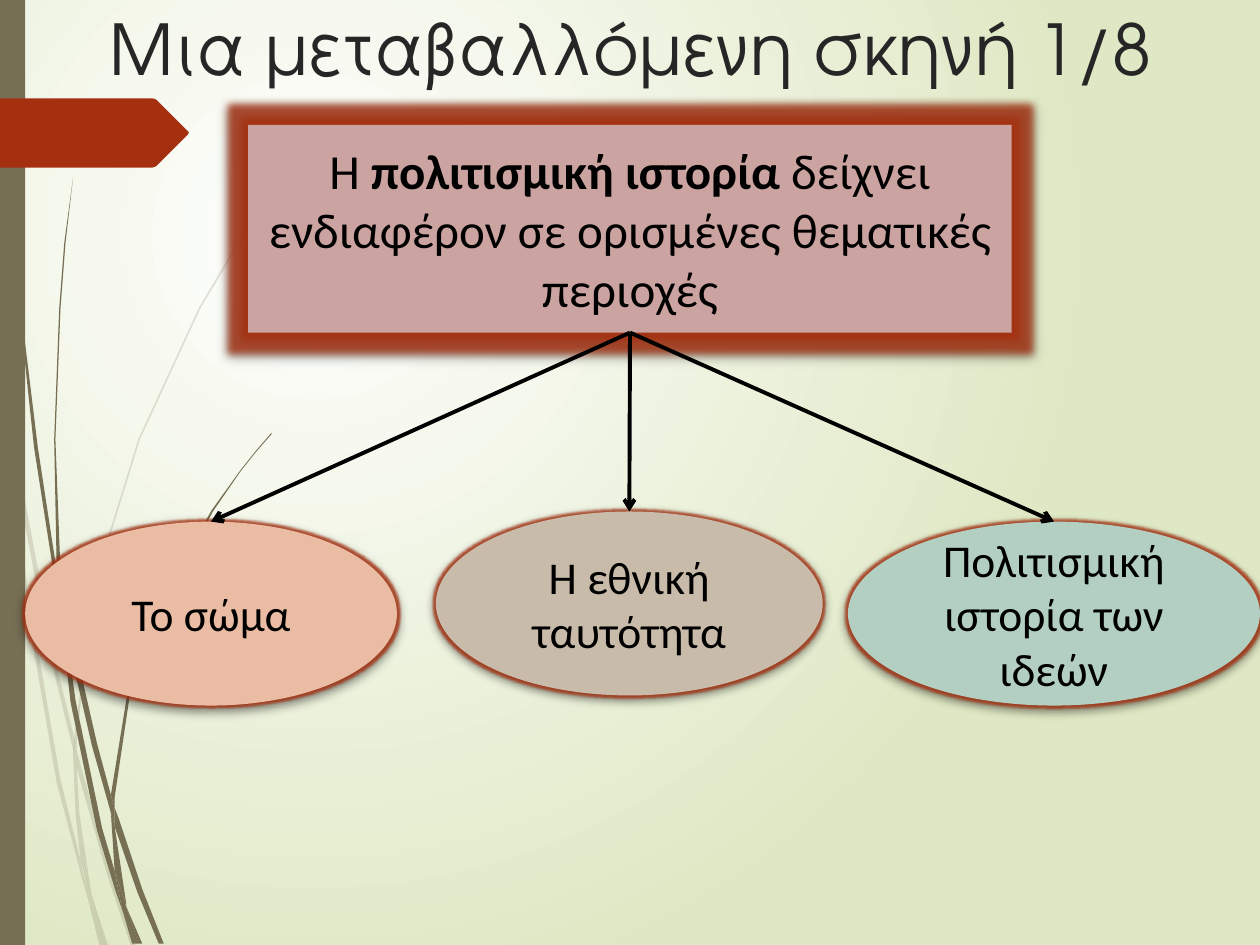
import pptx
import pptx.dml.color
import pptx.enum.shapes
import pptx.enum.text
import pptx.oxml
import pptx.oxml.ns
import pptx.util
from lxml import etree
from pptx.util import Inches

COLORS = {
    "olive": "766F54", "rust": "A53010", "white": "FFFFFF", "lime": "DFE8C4",
    "ink": "262626", "black": "000000", "rose": "CBA3A0", "peach": "EBBCA4",
    "sand": "C8BBAA", "mint": "B3CFC2",
}
SHAPES = pptx.enum.shapes.MSO_SHAPE
MIDDLE = pptx.enum.text.MSO_ANCHOR.MIDDLE
CENTER = pptx.enum.text.PP_ALIGN.CENTER

# Outlines of the grass blades: corner points in inches
PALE_BLADES = [
    [(.08, 3.5), (.06, 3.22), (0, 2.82), (0, 2.99), (.07, 3.44)],
    [(.4, 5.22), (.59, 5.99), (.59, 5.86), (.43, 5.2), (.1, 3.45), (.12, 3.76)],
    [(.64, 6.07), (.61, 5.96), (.61, 6.1), (.85, 6.94), (1.04, 7.51), (1.08, 7.51), (.88, 6.92)],
    [(.83, 7.51), (.86, 7.51), (.73, 7.11)],
    [(.64, 6.83), (.48, 6.19), (.22, 4.69), (.12, 3.76), (.08, 3.5), (.19, 4.7), (.45, 6.21),
     (.64, 6.93), (.7, 7.14), (.69, 7.07)],
    [(.58, 5.99), (.6, 6.46), (.64, 6.83), (.67, 6.92), (.73, 7.11), (.72, 7.06), (.63, 6.46),
     (.61, 6.1), (.61, 6.08)],
    [(.61, 5.84), (.76, 4.62), (1.11, 3.49), (1.59, 2.45), (1.87, 1.98), (2.01, 1.75),
     (2.17, 1.54), (2.17, 1.53), (2.01, 1.75), (1.86, 1.97), (1.58, 2.44), (1.1, 3.48),
     (.75, 4.61), (.59, 5.84), (.59, 5.86), (.61, 5.96)],
    [(.7, 7.14), (.79, 7.51), (.82, 7.51)],
    [(.61, 6.08), (.61, 6.1), (.61, 5.96), (.59, 5.86), (.58, 5.99)],
    [(.67, 6.92), (.65, 6.83), (.69, 7.07), (.7, 7.14), (.82, 7.51), (.83, 7.51), (.73, 7.11)],
]
DARK_BLADES = [
    [(.05, 1.1), (.14, 2.33), (.27, 3.55), (.46, 4.77), (.47, 4.81), (.45, 4.57), (.45, 4.53),
     (.3, 3.55), (.15, 2.32), (.06, 1.09), (.04, .48), (.03, 0), (.02, 0), (.03, .48)],
    [(.73, 5.92), (.88, 6.45), (.88, 6.33), (.88, 6.31), (.77, 5.9), (.5, 4.72), (.53, 5.05)],
    [(.94, 6.49), (.91, 6.41), (.91, 6.56), (1.09, 7.08), (1.26, 7.49), (1.3, 7.49), (1.13, 7.06)],
    [(.91, 6.91), (.81, 6.57), (.6, 5.56), (.53, 5.05), (.47, 4.77), (.56, 5.57), (.77, 6.59),
     (.92, 7.08), (.97, 7.22), (.96, 7.17)],
    [(.5, 4.72), (.48, 4.53), (.44, 3.49), (.48, 2.45), (.52, 1.93), (.58, 1.41), (.51, 1.93),
     (.47, 2.45), (.43, 3.49), (.45, 4.49), (.49, 4.72)],
    [(1.1, 7.49), (1.13, 7.49), (1, 7.19)],
    [(.47, 4.77), (.53, 5.05), (.5, 4.72), (.49, 4.72), (.45, 4.49), (.45, 4.53)],
    [(.91, 6.33), (1.03, 5.52), (1.31, 4.76), (1.69, 4.06), (1.91, 3.74), (2.03, 3.59),
     (2.16, 3.44), (2.15, 3.44), (2.03, 3.58), (1.91, 3.73), (1.68, 4.05), (1.29, 4.74),
     (1.01, 5.51), (.88, 6.31), (.91, 6.41)],
    [(.97, 7.22), (1.05, 7.49), (1.08, 7.49)],
    [(.88, 6.45), (.91, 6.91), (.96, 7.06), (1, 7.19), (1, 7.16), (.91, 6.56), (.9, 6.51)],
    [(.88, 6.45), (.9, 6.51), (.91, 6.56), (.91, 6.41), (.88, 6.31), (.88, 6.33)],
    [(.96, 7.06), (.91, 6.91), (.96, 7.17), (.97, 7.22), (1.08, 7.49), (1.1, 7.49), (1, 7.19)],
]
TAB = [(1.49, 1.07), (1.24, 1.32), (1.21, 1.33), (0, 1.33), (0, .78), (1.21, .78),
       (1.24, .79), (1.49, 1.04), (1.5, 1.05)]


def rgb(name):
    return pptx.dml.color.RGBColor.from_string(COLORS[name])


def add_xml(parent, tag, **attributes):
    return etree.SubElement(parent, pptx.oxml.ns.qn(tag), attributes)


def paint(shape, color, opacity=100):
    """Give a plain fill without outline or shadow."""
    shape.shadow.inherit = False
    shape.line.fill.background()
    shape.fill.solid()
    shape.fill.fore_color.rgb = rgb(color)
    if opacity < 100:
        fill = shape.fill._xPr.find(pptx.oxml.ns.qn("a:solidFill"))
        add_xml(fill[0], "a:alpha", val=str(opacity * 1000))


def add_outline(page, points, color, opacity=100):
    corners = [(Inches(x), Inches(y)) for x, y in points]
    builder = page.shapes.build_freeform(*corners[0])
    builder.add_line_segments(corners[1:], close=True)
    paint(builder.convert_to_shape(), color, opacity)


def add_glow_and_shadow(shape, radius):
    effects = shape._element.spPr.find(pptx.oxml.ns.qn("a:effectLst"))
    glow = add_xml(effects, "a:glow", rad=str(pptx.util.Pt(radius)))
    shadow = add_xml(effects, "a:outerShdw", blurRad=str(pptx.util.Pt(5)),
                     dist=str(pptx.util.Pt(2)), dir="5400000", rotWithShape="0")
    for effect, color, opacity in ((glow, "rust", 80), (shadow, "black", 43)):
        tint = add_xml(effect, "a:srgbClr", val=COLORS[color])
        add_xml(tint, "a:alpha", val=str(opacity * 1000))


def write(frame, spans, size, font, color):
    """Fill a frame with one centred paragraph of (text, bold) spans."""
    frame.word_wrap = True
    frame.vertical_anchor = MIDDLE
    para = frame.paragraphs[0]
    para.alignment = CENTER
    for text, bold in spans:
        span = para.add_run()
        span.text = text
        span.font.color.rgb = rgb(color)
        for name, value in {"size": pptx.util.Pt(size), "name": font, "bold": bold}.items():
            setattr(span.font, name, value)


def add_box(page, kind, place, color, spans, size, glow):
    box = page.shapes.add_shape(kind, *map(Inches, place))
    paint(box, color)
    add_glow_and_shadow(box, glow)
    write(box.text_frame, spans, size, "Calibri", "black")
    return box


def add_arrow(page, start, end):
    arrow = page.shapes.add_connector(pptx.enum.shapes.MSO_CONNECTOR.STRAIGHT, 0, 0, 0, 0)
    arrow.begin_connect(start, 2)
    arrow.end_connect(end, 0)
    arrow.line.width = pptx.util.Pt(2.25)
    arrow.line.color.rgb = rgb("black")
    add_xml(arrow.line._get_or_add_ln(), "a:tailEnd", type="arrow")
    add_xml(arrow._element.spPr, "a:effectLst")


def set_background(page):
    """Radial gradient with its light centre a quarter in from the top left."""
    fill = page.background.fill
    fill.gradient()
    for stop, color in zip(fill.gradient_stops, ("white", "lime")):
        stop.color.rgb = rgb(color)
    linear = next(page._element.iter(pptx.oxml.ns.qn("a:lin")))
    gradient = linear.getparent()
    gradient.remove(linear)
    circle = add_xml(gradient, "a:path", path="circle")
    add_xml(circle, "a:fillToRect", l="50000", t="50000", r="100000", b="100000")


def add_decoration(page):
    for blade in PALE_BLADES:
        add_outline(page, blade, "olive", 20)
    for blade in DARK_BLADES:
        add_outline(page, blade, "olive")
    bar = page.shapes.add_shape(SHAPES.RECTANGLE, 0, 0, Inches(0.2), Inches(7.5))
    paint(bar, "olive")
    add_outline(page, TAB, "rust")


def add_title(page, text):
    title = page.shapes.title
    place = {"left": 0.39, "top": 0, "width": 9.22, "height": 0.76}
    for name, value in place.items():
        setattr(title, name, Inches(value))
    write(title.text_frame, [(text, False)], 40, "TeX Gyre Adventor", "ink")
    page.shapes._spTree.append(title._element)  # in front of the decoration


def main():
    deck = pptx.Presentation()
    deck.slide_width, deck.slide_height = Inches(10), Inches(7.5)
    page = deck.slides.add_slide(deck.slide_layouts[5])
    set_background(page)
    add_decoration(page)
    add_title(page, "Μια μεταβαλλόμενη σκηνή 1/8")

    theme = [("Η ", False), ("πολιτισμική ιστορία ", True),
             ("δείχνει ενδιαφέρον σε ορισμένες θεματικές περιοχές", False)]
    root = add_box(page, SHAPES.RECTANGLE, (1.97, 0.99, 6.06, 1.65), "rose", theme, 28, 8)
    topics = [
        ("Το σώμα", "peach", 0.2, 4.14, 2.95),
        ("Η εθνική ταυτότητα", "sand", 3.46, 4.06, 3.07),
        ("Πολιτισμική ιστορία των ιδεών", "mint", 6.73, 4.14, 3.27),
    ]
    ovals = [add_box(page, SHAPES.OVAL, (left, top, width, 1.46), color, [(text, False)], 26, 3)
             for text, color, left, top, width in topics]
    for oval in ovals:
        add_arrow(page, root, oval)
    deck.save("out.pptx")


if __name__ == "__main__":
    main()
